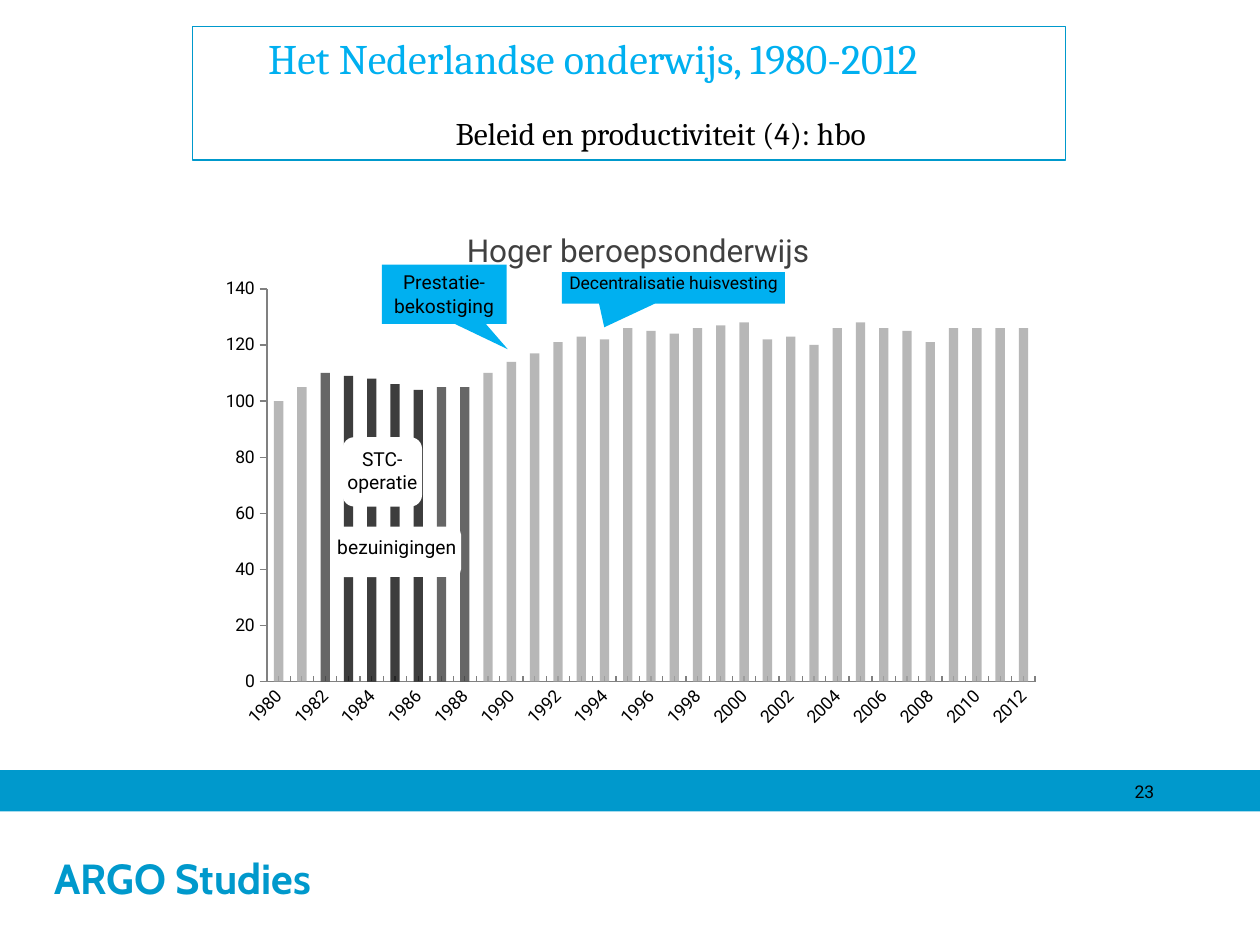
from lxml import etree
from pptx import Presentation
from pptx import util as u
from pptx.chart.data import CategoryChartData
from pptx.dml.color import RGBColor
from pptx.enum import chart as charts, shapes, text
from pptx.oxml.ns import qn

BLUE = RGBColor(0x00, 0x99, 0xCC)
SKY = RGBColor(0x00, 0xB0, 0xF0)
WHITE = RGBColor(0xFF, 0xFF, 0xFF)
BLACK = RGBColor(0x00, 0x00, 0x00)
TITLE_GRAY = RGBColor(0x40, 0x40, 0x40)
AXIS_GRAY = RGBColor(0x80, 0x80, 0x80)
BAR_GRAY = RGBColor(0xA6, 0xA6, 0xA6)
BAR_DARK = RGBColor(0x40, 0x40, 0x40)
BAR_BLACK = RGBColor(0x0D, 0x0D, 0x0D)

CENTER = text.PP_ALIGN.CENTER
SHAPE = shapes.MSO_SHAPE

PRODUCTIVITY = [100, 105, 110, 109, 108, 106, 104, 105, 105, 110, 114,
                117, 121, 123, 122, 126, 125, 124, 126, 127, 128, 122,
                123, 120, 126, 128, 126, 125, 121, 126, 126, 126, 126]


def write(paragraph, content, size=11, font="Roboto", color=BLACK, bold=False,
          align=None, indent=0, after=0):
    """Put formatted text in a paragraph."""
    if indent:
        properties = paragraph._p.get_or_add_pPr()
        properties.set("marL", str(u.Inches(indent)))
        properties.set("indent", "0")
    paragraph.alignment = align or text.PP_ALIGN.LEFT
    paragraph.space_after = u.Pt(after)
    run = paragraph.add_run()
    run.text = content
    run.font.size = u.Pt(size)
    run.font.name = font
    run.font.bold = bold
    run.font.color.rgb = color


def set_fill(fill, color, alpha=100):
    fill.solid()
    fill.fore_color.rgb = color
    if alpha < 100:
        for node in fill._xPr.iter(qn("a:srgbClr")):
            etree.SubElement(node, qn("a:alpha")).set("val", str(alpha * 1000))


def set_layout(parent, index, **fractions):
    """Place a chart part by fractions of the chart area."""
    for old in parent.findall(qn("c:layout")):
        parent.remove(old)
    layout = etree.Element(qn("c:layout"))
    manual = etree.SubElement(layout, qn("c:manualLayout"))
    if "w" in fractions:
        etree.SubElement(manual, qn("c:layoutTarget")).set("val", "inner")
    for mode in ("xMode", "yMode"):
        etree.SubElement(manual, qn("c:" + mode)).set("val", "edge")
    for name, value in fractions.items():
        etree.SubElement(manual, qn("c:" + name)).set("val", str(value))
    parent.insert(index, layout)


class SlideBuilder:
    def __init__(self, slide, font="Roboto", line_width=0.75):
        self.slide = slide
        self.font = font
        self.line_width = line_width

    def frame(self, shape, inset, anchor):
        frame = shape.text_frame
        frame.word_wrap = True
        frame.vertical_anchor = anchor
        (frame.margin_left, frame.margin_top,
         frame.margin_right, frame.margin_bottom) = map(u.Inches, inset)
        return frame

    def shape(self, kind, box, fill=None, line=None, inset=(0, 0.05, 0, 0.05),
              anchor=text.MSO_ANCHOR.TOP):
        shape = self.slide.shapes.add_shape(kind, *map(u.Inches, box))
        shape.shadow.inherit = False
        if fill is None:
            shape.fill.background()
        else:
            set_fill(shape.fill, fill)
        if line is None:
            shape.line.fill.background()
        else:
            shape.line.color.rgb = line
            shape.line.width = u.Pt(self.line_width)
        self.frame(shape, inset, anchor)
        return shape

    def label(self, kind, box, lines, fill, size=11, pointer=(), **options):
        shape = self.shape(kind, box, fill, **options)
        for index, value in enumerate(pointer):
            shape.adjustments[index] = value
        frame = shape.text_frame
        for index, line in enumerate(lines):
            paragraph = frame.add_paragraph() if index else frame.paragraphs[0]
            write(paragraph, line, size=size, font=self.font, align=CENTER)

    def textbox(self, box, content, **options):
        shape = self.slide.shapes.add_textbox(*map(u.Inches, box))
        frame = self.frame(shape, (0, 0.05, 0, 0.05), text.MSO_ANCHOR.TOP)
        write(frame.paragraphs[0], content, **options)

    def column_chart(self, box, title, categories, values, highlights):
        data = CategoryChartData()
        data.categories = categories
        data.add_series("Series 1", values)
        chart = self.slide.shapes.add_chart(
            charts.XL_CHART_TYPE.COLUMN_CLUSTERED, *map(u.Inches, box), data).chart
        chart.has_legend = False
        chart.font.size = u.Pt(10)
        chart.font.name = self.font
        chart.font.color.rgb = BLACK

        chart.has_title = True
        write(chart.chart_title.text_frame.paragraphs[0], title, size=18,
              font=self.font, color=TITLE_GRAY, align=CENTER)
        set_layout(chart.chart_title._element, 1, x=0.3, y=0.04)
        plot_area = chart._chartSpace.chart.plotArea
        set_layout(plot_area, 0, x=0.07, y=0.16, w=0.91, h=0.73)

        # Columns
        plot = chart.plots[0]
        plot.gap_width = 150
        plot.vary_by_categories = False
        series = plot.series[0]
        set_fill(series.format.fill, BAR_GRAY, 80)
        for index, color in highlights.items():
            set_fill(series.points[index].format.fill, color, 80)

        # Axes
        tick = charts.XL_TICK_MARK
        value_axis, category_axis = chart.value_axis, chart.category_axis
        value_axis.minimum_scale, value_axis.maximum_scale = 0, 140
        value_axis.major_unit = 20
        value_axis.has_major_gridlines = False
        value_axis.major_tick_mark = tick.OUTSIDE
        category_axis.major_tick_mark = tick.NONE
        category_axis.minor_tick_mark = tick.INSIDE
        for axis in (value_axis, category_axis):
            axis.format.line.color.rgb = AXIS_GRAY
            axis.tick_labels.font.size = u.Pt(10)
        body = category_axis._element.find(qn("c:txPr")).find(qn("a:bodyPr"))
        body.set("rot", "-2700000")
        skip = etree.Element(qn("c:tickLblSkip"))
        skip.set("val", "2")
        category_axis._element.find(qn("c:noMultiLvlLbl")).addprevious(skip)


def main():
    presentation = Presentation()
    presentation.slide_width = u.Inches(10)
    presentation.slide_height = u.Inches(7.5)
    builder = SlideBuilder(presentation.slides.add_slide(presentation.slide_layouts[6]))

    # Footer band, name and page number
    builder.shape(SHAPE.RECTANGLE, (0, 6.36, 10, 0.31), BLUE, BLUE)
    footer = builder.shape(SHAPE.RECTANGLE, (0, 6.44, 10, 1.06), WHITE,
                           inset=(0.43, 0.05, 0.1, 0.05),
                           anchor=text.MSO_ANCHOR.MIDDLE)
    write(footer.text_frame.paragraphs[0], "ARGO Studies", size=24, font="Cabin",
          color=BLUE, bold=True)
    builder.shape(SHAPE.RECTANGLE, (0, 6.12, 10, 0.24), BLUE, BLUE)
    builder.textbox((7.08, 6.15, 2.08, 0.25), "23", size=10,
                    align=text.PP_ALIGN.RIGHT)

    # Productivity chart, with the years of budget cuts darker
    highlights = {index: BAR_BLACK if 3 <= index <= 6 else BAR_DARK
                  for index in range(2, 9)}
    builder.column_chart((1.65, 1.61, 6.7, 4.27), "Hoger beroepsonderwijs",
                         [str(year) for year in range(1980, 2013)],
                         PRODUCTIVITY, highlights)

    # Title box
    heading = builder.shape(SHAPE.RECTANGLE, (1.53, 0.21, 6.93, 1.06), line=BLUE,
                            inset=(0.1, 0.05, 0.1, 0.05)).text_frame
    write(heading.paragraphs[0], "Het Nederlandse onderwijs, 1980-2012", size=24,
          font="Cambria", color=SKY, indent=0.5, after=18)
    write(heading.add_paragraph(), "Beleid en productiviteit (4): hbo", size=18,
          font="Cambria", align=CENTER, indent=0.5, after=18)

    # Policy labels
    callout, rounded = SHAPE.RECTANGULAR_CALLOUT, SHAPE.ROUNDED_RECTANGLE
    builder.label(callout, (4.46, 2.16, 1.77, 0.25), ["Decentralisatie huisvesting"],
                  SKY, size=10, pointer=(-0.31, 1.25), inset=(0, 0, 0, 0))
    builder.label(rounded, (2.72, 3.47, 0.63, 0.55), ["STC-", "operatie"], WHITE)
    builder.label(callout, (3.03, 2.1, 0.99, 0.47), ["Prestatie-", "bekostiging"],
                  SKY, pointer=(0.51, 0.93))
    builder.label(rounded, (2.64, 4.18, 1.02, 0.4), ["bezuinigingen"], WHITE)

    presentation.save("out.pptx")


if __name__ == "__main__":
    main()
